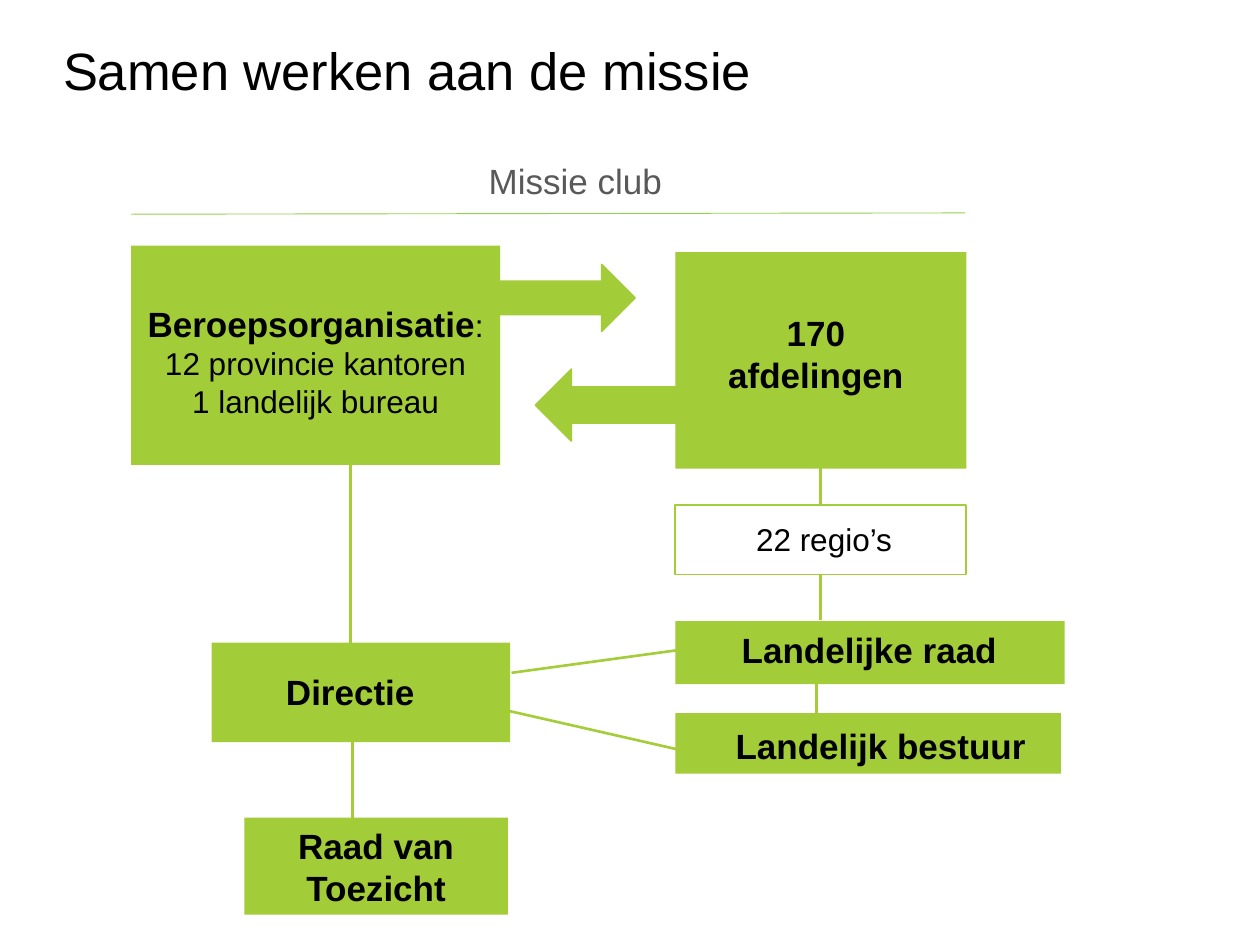
from pptx import Presentation
from pptx.dml.color import RGBColor
from pptx.enum.shapes import MSO_CONNECTOR, MSO_SHAPE
from pptx.enum.text import MSO_ANCHOR, PP_ALIGN
from pptx.oxml.ns import qn
from pptx.util import Inches, Pt
from lxml.etree import SubElement

THEME = {
    "font": "Arial",
    "black": RGBColor(0x00, 0x00, 0x00),
    "grey": RGBColor(0x59, 0x59, 0x59),
    "green": RGBColor(0xA3, 0xCC, 0x39),
    "line": RGBColor(0xA4, 0xCD, 0x39),
    "rule": RGBColor(0x92, 0xD0, 0x50),
    "title": 30, "heading": 20, "detail": 18,
}

# Content: each paragraph is a list of (text, size, bold) runs
TITLE = "Samen werken aan de missie"
MISSION = "Missie club"
MISSION_RULE = ((1.04, 1.7), (7.66, 1.69))
SUPERVISORS = "Raad van Toezicht"

LABELS = [
    ((1.04, 2.35, 2.93, 1.04), [
        [("Beroepsorganisatie", "heading", True), (":", "detail", False)],
        [("12 provincie kantoren", "detail", False)],
        [("1 landelijk bureau", "detail", False)],
    ]),
    ((5.32, 2.42, 2.31, 0.77), [
        [("170", "heading", True)],
        [("afdelingen", "heading", True)],
    ]),
    ((5.42, 4.08, 2.24, 0.4), [[("22 regio’s", "detail", False)]]),
    ((5.38, 4.94, 3.04, 0.44), [[("Landelijke raad", "heading", True)]]),
    ((5.55, 5.7, 2.88, 0.44), [[("Landelijk bestuur", "heading", True)]]),
    ((1.79, 5.27, 1.98, 0.44), [[("Directie", "heading", True)]]),
]

FILLED_BOXES = [
    (1.04, 1.95, 2.93, 1.74),  # Beroepsorganisatie
    (5.36, 2, 2.31, 1.72),     # afdelingen
    (5.36, 4.93, 3.09, 0.5),   # Landelijke raad
    (5.36, 5.66, 3.06, 0.48),  # Landelijk bestuur
    (1.68, 5.1, 2.37, 0.79),   # Directie
]
REGIONS_BOX = (5.36, 4.01, 2.31, 0.55)
SUPERVISORS_BOX = (1.94, 6.49, 2.09, 0.77)

ARROWS = [
    (MSO_SHAPE.RIGHT_ARROW, (3.97, 2.1, 1.07, 0.53)),
    (MSO_SHAPE.LEFT_ARROW, (4.25, 2.93, 1.13, 0.57)),
]

LINKS = [
    ((2.78, 3.43), (2.78, 5.27)),  # Beroepsorganisatie - Directie
    ((2.8, 5.74), (2.8, 6.49)),    # Directie - Raad van Toezicht
    ((6.51, 3.69), (6.51, 4.01)),  # afdelingen - regio's
    ((6.51, 4.92), (6.51, 4.56)),  # regio's - Landelijke raad
    ((6.48, 5.26), (6.48, 5.66)),  # Landelijke raad - Landelijk bestuur
    ((5.38, 5.16), (4.06, 5.34)),  # Landelijke raad - Directie
    ((5.52, 5.98), (3.94, 5.62)),  # Landelijk bestuur - Directie
]

prs = Presentation()
prs.slide_width, prs.slide_height = Inches(10), Inches(7.5)
slide = prs.slides.add_slide(prs.slide_layouts[5])


def inches(values):
    return [Inches(value) for value in values]


def write(frame, paragraphs, color="black", align=PP_ALIGN.CENTER):
    frame.word_wrap = True
    for index, runs in enumerate(paragraphs):
        paragraph = frame.paragraphs[0] if index == 0 else frame.add_paragraph()
        paragraph.alignment = align
        for text, size, bold in runs:
            run = paragraph.add_run()
            run.text = text
            run.font.name = THEME["font"]
            run.font.size = Pt(THEME[size])
            run.font.bold = bold
            run.font.color.rgb = THEME[color]


def add_label(box, paragraphs, **style):
    label = slide.shapes.add_textbox(*inches(box))
    write(label.text_frame, paragraphs, **style)


def add_block(kind, box, fill="green", line=None):
    block = slide.shapes.add_shape(kind, *inches(box))
    block.shadow.inherit = False
    if fill:
        block.fill.solid()
        block.fill.fore_color.rgb = THEME[fill]
    else:
        block.fill.background()
    if line:
        block.line.color.rgb = THEME[line]
        block.line.width = Pt(1)
    else:
        block.line.fill.background()
    return block


def add_line(start, end, color="line", width=1.5):
    line = slide.shapes.add_connector(
        MSO_CONNECTOR.STRAIGHT, *inches(start), *inches(end))
    line.line.color.rgb = THEME[color]
    line.line.width = Pt(width)
    SubElement(line._element.spPr, qn("a:effectLst"))


# Title
title = slide.shapes.title
title.left, title.top, title.width, title.height = inches((0.5, 0.36, 8.77, 0.71))
heading = title.text_frame
heading.margin_left = heading.margin_right = 0
heading.margin_top = heading.margin_bottom = 0
heading.vertical_anchor = MSO_ANCHOR.TOP
write(heading, [[(TITLE, "title", False)]], align=PP_ALIGN.LEFT)
heading.paragraphs[0].line_spacing = 0.9

# Mission with its rule
add_label((3.78, 1.22, 1.64, 0.44), [[(MISSION, "heading", False)]],
          color="grey", align=PP_ALIGN.LEFT)
add_line(*MISSION_RULE, color="rule", width=0.5)

# Links lie below the boxes
for start, end in LINKS:
    add_line(start, end)
for kind, box in ARROWS:
    add_block(kind, box, line="green")

# Boxes
for box in FILLED_BOXES:
    add_block(MSO_SHAPE.RECTANGLE, box)
add_block(MSO_SHAPE.RECTANGLE, REGIONS_BOX, fill=None, line="line")
supervisors = add_block(MSO_SHAPE.RECTANGLE, SUPERVISORS_BOX)
write(supervisors.text_frame, [[(SUPERVISORS, "heading", True)]])

# Labels
for box, paragraphs in LABELS:
    add_label(box, paragraphs)

prs.save("out.pptx")
